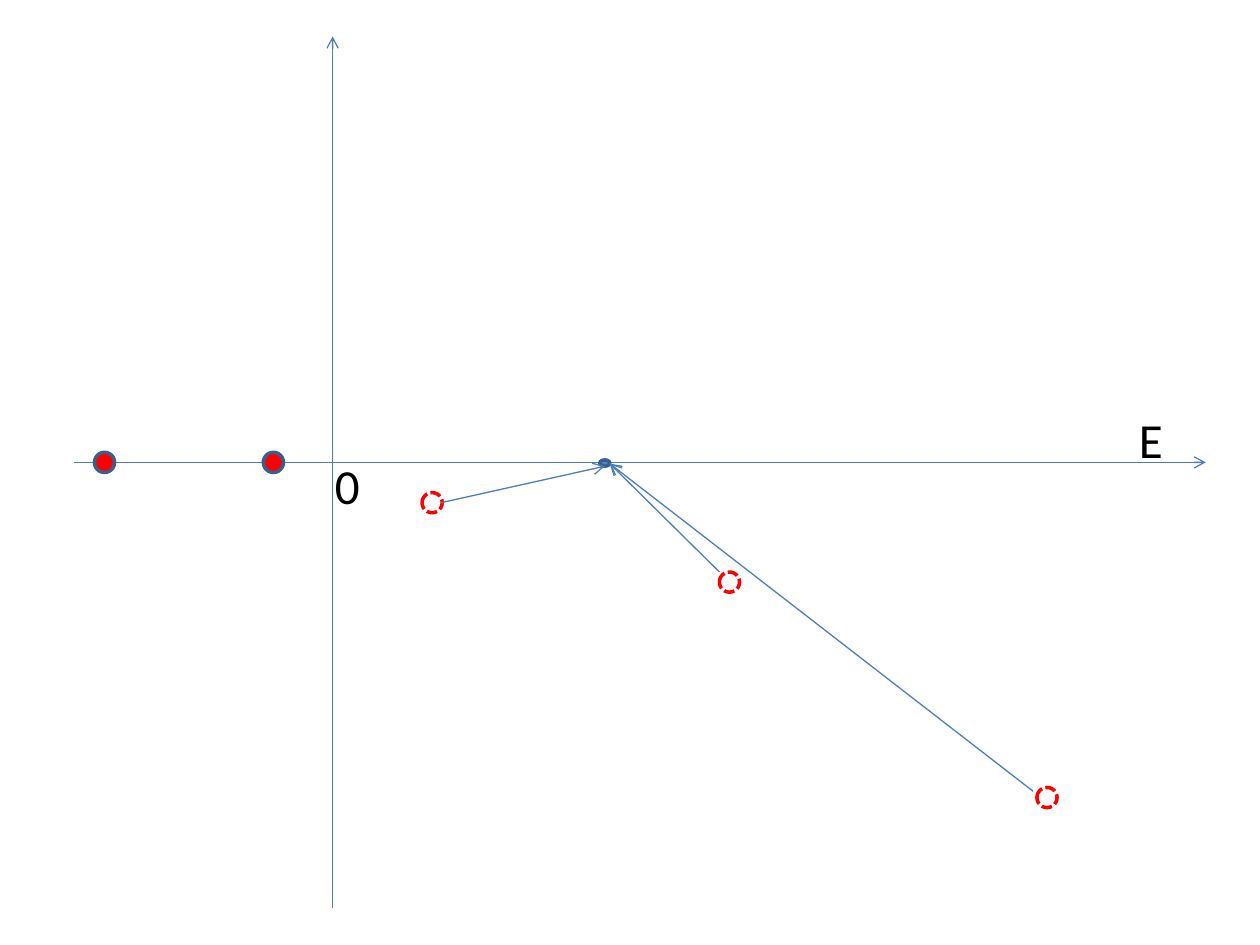
import pptx
import pptx.dml.color
import pptx.enum.dml
import pptx.enum.shapes
import pptx.enum.text
import pptx.oxml.ns
import pptx.util
from lxml import etree
from pptx.util import Inches

RGBColor = pptx.dml.color.RGBColor
ARROW_BLUE = RGBColor(0x4B, 0x7E, 0xBC)
OUTLINE_BLUE = RGBColor(0x3A, 0x5F, 0x8C)
THRESHOLD_BLUE = RGBColor(0x4F, 0x81, 0xBD)
RED = RGBColor(0xFF, 0x00, 0x00)
BLACK = RGBColor(0x00, 0x00, 0x00)

AXIS_Y = 3.67
AXIS_X = 2.64
POLE_SIZE = 0.16
BOUND_STATES = [0.75, 2.09]
RESONANCES = [(3.35, 3.91), (5.71, 4.54), (8.23, 6.25)]
TRAJECTORIES = [
    ((5.71, 4.54), (4.84, 3.68)),
    ((3.5, 3.99), (4.8, 3.7)),
    ((8.2, 6.28), (4.84, 3.68)),
]
LABEL_FORMAT = {"name": "Calibri", "size": pptx.util.Pt(28)}


def add_arrow(slide, start, end):
    arrow = slide.shapes.add_connector(
        pptx.enum.shapes.MSO_CONNECTOR.STRAIGHT,
        *(Inches(value) for value in (*start, *end)))
    arrow.line.color.rgb = ARROW_BLUE
    arrow.line.width = pptx.util.Pt(0.75)
    qn = pptx.oxml.ns.qn
    etree.SubElement(arrow.line._get_or_add_ln(), qn("a:tailEnd"), type="arrow")
    etree.SubElement(arrow._element.spPr, qn("a:effectLst"))


def add_point(slide, left, top, width, height, outline, fill=None, dash=None):
    """Draw an ellipse, hollow when no fill is given."""
    point = slide.shapes.add_shape(
        pptx.enum.shapes.MSO_SHAPE.OVAL,
        *(Inches(value) for value in (left, top, width, height)))
    point.shadow.inherit = False
    if fill is None:
        point.fill.background()
    else:
        point.fill.solid()
        point.fill.fore_color.rgb = fill
    point.line.color.rgb = outline
    point.line.width = pptx.util.Pt(2)
    if dash is not None:
        point.line.dash_style = dash


def add_label(slide, text, left, top):
    label = slide.shapes.add_textbox(
        Inches(left), Inches(top), Inches(0.47), Inches(0.57))
    frame = label.text_frame
    frame.word_wrap = True
    frame.auto_size = pptx.enum.text.MSO_AUTO_SIZE.SHAPE_TO_FIT_TEXT
    run = frame.paragraphs[0].add_run()
    run.text = text
    for attribute, value in LABEL_FORMAT.items():
        setattr(run.font, attribute, value)
    run.font.color.rgb = BLACK


def main():
    deck = pptx.Presentation()
    deck.slide_width, deck.slide_height = Inches(10), Inches(7.5)
    slide = deck.slides.add_slide(deck.slide_layouts[6])

    add_arrow(slide, (0.59, AXIS_Y), (9.57, AXIS_Y))
    add_arrow(slide, (AXIS_X, 7.21), (AXIS_X, 0.29))
    for left in BOUND_STATES:
        add_point(slide, left, AXIS_Y - POLE_SIZE / 2, POLE_SIZE, POLE_SIZE,
                  OUTLINE_BLUE, fill=RED)
    add_label(slide, "E", 8.94, 3.2)
    for left, top in RESONANCES:
        add_point(slide, left, top, POLE_SIZE, POLE_SIZE, RED,
                  dash=pptx.enum.dml.MSO_LINE.SQUARE_DOT)
    add_label(slide, "0", 2.56, 3.57)
    add_point(slide, 4.76, 3.65, 0.08, 0.05, OUTLINE_BLUE, fill=THRESHOLD_BLUE)
    for start, end in TRAJECTORIES:
        add_arrow(slide, start, end)

    deck.save("out.pptx")


if __name__ == "__main__":
    main()
